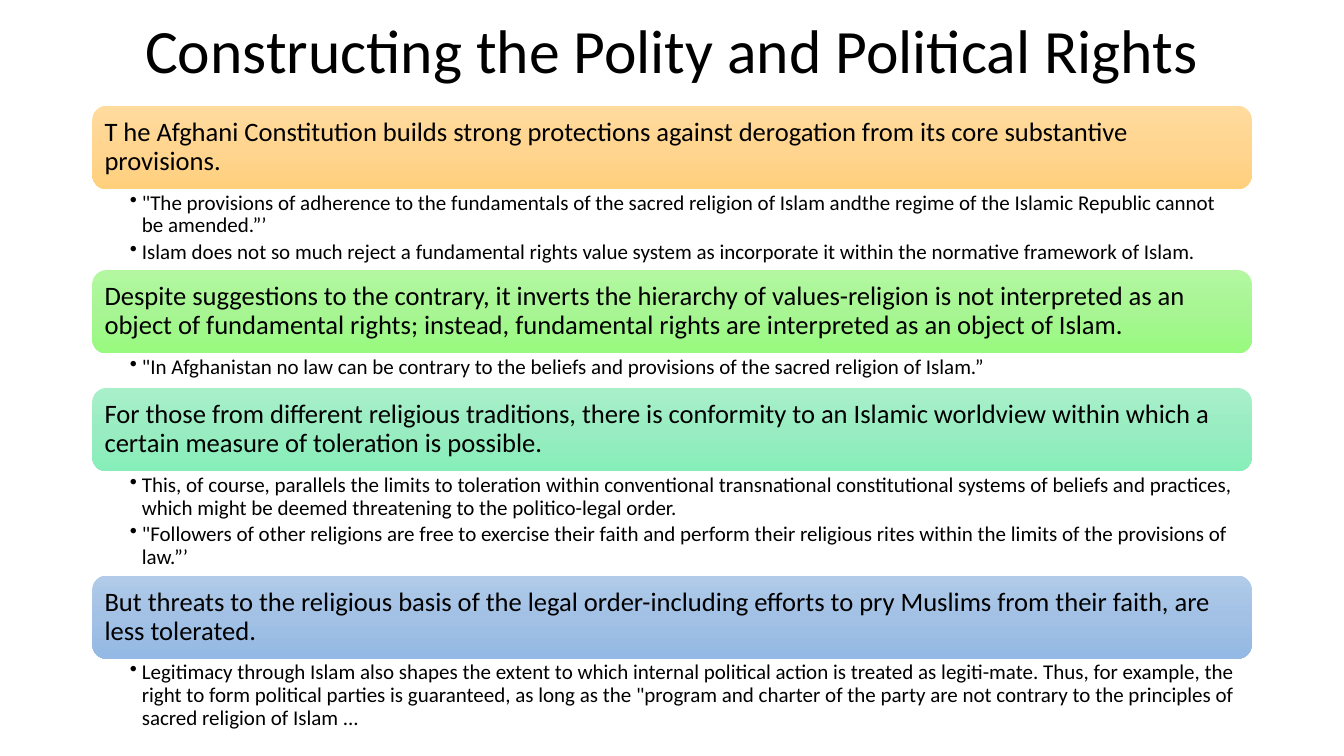
from copy import deepcopy

from lxml import etree
from pptx import Presentation
from pptx.dml.color import RGBColor
from pptx.enum.shapes import MSO_SHAPE
from pptx.enum.text import MSO_ANCHOR, MSO_AUTO_SIZE, PP_ALIGN
from pptx.oxml.ns import qn
from pptx.util import Inches, Pt

ROUNDED = MSO_SHAPE.ROUNDED_RECTANGLE
MIDDLE, TOP = MSO_ANCHOR.MIDDLE, MSO_ANCHOR.TOP
LEFT, CENTER = PP_ALIGN.LEFT, PP_ALIGN.CENTER
NO_FIT = MSO_AUTO_SIZE.NONE
TITLE_ONLY = 5

BLACK = RGBColor(0x00, 0x00, 0x00)
ORANGE = [RGBColor(0xFF, 0xDB, 0x9E), RGBColor(0xFF, 0xD5, 0x90), RGBColor(0xFF, 0xD0, 0x7C)]
GREEN = [RGBColor(0xB3, 0xF8, 0xA1), RGBColor(0xA7, 0xF6, 0x93), RGBColor(0x98, 0xFA, 0x7E)]
MINT = [RGBColor(0xA8, 0xF0, 0xCA), RGBColor(0x99, 0xEC, 0xC1), RGBColor(0x86, 0xEE, 0xB9)]
BLUE = [RGBColor(0xB1, 0xCB, 0xE9), RGBColor(0xA3, 0xC1, 0xE5), RGBColor(0x93, 0xB9, 0xE4)]

FONT = "Calibri"
SLIDE_WIDTH, SLIDE_HEIGHT = Inches(13.33), Inches(7.5)

# Percent of the slide's width or height
MARGIN, CONTENT_WIDTH = 6.88, 86.25
TITLE_TOP, TITLE_HEIGHT = 1.47, 11.2
FIRST_BAR_TOP, BAR_HEIGHT = 14, 11

# Gradient, heading, height of the list in percent, list items
SECTIONS = [
    (ORANGE,
     "T he Afghani Constitution builds strong protections against derogation from its core "
     "substantive provisions.",
     10.73,
     ["\"The provisions of adherence to the fundamentals of the sacred religion of Islam "
      "andthe regime of the Islamic Republic cannot be amended.”’",
      "Islam does not so much reject a fundamental rights value system as incorporate it "
      "within the normative framework of Islam."]),
    (GREEN,
     "Despite suggestions to the contrary, it inverts the hierarchy of values-religion is not "
     "interpreted as an object of fundamental rights; instead, fundamental rights are "
     "interpreted as an object of Islam.",
     4.6,
     ["\"In Afghanistan no law can be contrary to the beliefs and provisions of the sacred "
      "religion of Islam.”"]),
    (MINT,
     "For those from different religious traditions, there is conformity to an Islamic "
     "worldview within which a certain measure of toleration is possible.",
     13.8,
     ["This, of course, parallels the limits to toleration within conventional transnational "
      "constitutional systems of beliefs and practices, which might be deemed threatening to "
      "the politico-legal order.",
      "\"Followers of other religions are free to exercise their faith and perform their "
      "religious rites within the limits of the provisions of law.”’"]),
    (BLUE,
     "But threats to the religious basis of the legal order-including efforts to pry Muslims "
     "from their faith, are less tolerated.",
     10,
     ["Legitimacy through Islam also shapes the extent to which internal political action is "
      "treated as legiti-mate. Thus, for example, the right to form political parties is "
      "guaranteed, as long as the \"program and charter of the party are not contrary to the "
      "principles of sacred religion of Islam ..."]),
]


def content_area(top, height):
    """Left, top, width and height of a full-width band."""
    return (round(SLIDE_WIDTH * MARGIN / 100), round(SLIDE_HEIGHT * top / 100),
            round(SLIDE_WIDTH * CONTENT_WIDTH / 100), round(SLIDE_HEIGHT * height / 100))


def format_frame(frame, anchor, left, right, vertical):
    frame.word_wrap = True
    frame.auto_size = NO_FIT
    frame.vertical_anchor = anchor
    frame.margin_left, frame.margin_right = Inches(left), Inches(right)
    frame.margin_top = frame.margin_bottom = Inches(vertical)


def format_para(para, size, align=LEFT):
    para.alignment = align
    para.line_spacing = 0.9
    para.font.name = FONT
    para.font.size = Pt(size)
    para.font.color.rgb = BLACK


def add_bullet(para):
    properties = para._p.get_or_add_pPr()
    properties.set("marL", str(Inches(0.12)))
    properties.set("indent", str(-Inches(0.12)))
    etree.SubElement(properties, qn("a:buChar")).set("char", "•")


def fill_gradient(shape, colors):
    """Fill from top to bottom with three evenly spaced colours."""
    shape.fill.gradient()
    shape.fill.gradient_angle = 270
    stop_list = shape._element.spPr.find(".//" + qn("a:gsLst"))
    stop_list.insert(1, deepcopy(stop_list[0]))
    for index, (stop, color) in enumerate(zip(shape.fill.gradient_stops, colors)):
        stop.position = index / 2
        stop.color.rgb = color


def add_title(page, text):
    title = page.shapes.title
    title.left, title.top, title.width, title.height = content_area(TITLE_TOP, TITLE_HEIGHT)
    title.text_frame.text = text
    format_frame(title.text_frame, MIDDLE, 0.1, 0.1, 0.05)
    format_para(title.text_frame.paragraphs[0], 44, CENTER)


def add_heading_bar(page, top, text, colors):
    bar = page.shapes.add_shape(ROUNDED, *content_area(top, BAR_HEIGHT))
    bar.shadow.inherit = False
    bar.line.fill.background()
    fill_gradient(bar, colors)
    bar.text_frame.text = text
    format_frame(bar.text_frame, MIDDLE, 0.08, 0.08, 0.08)
    format_para(bar.text_frame.paragraphs[0], 19)


def add_bullet_list(page, top, height, items):
    box = page.shapes.add_textbox(*content_area(top, height))
    frame = box.text_frame
    format_frame(frame, TOP, 0.37, 0.15, 0.03)
    frame.text = "\n".join(items)
    for para in frame.paragraphs:
        para.level = 1
        add_bullet(para)
        format_para(para, 15)
        para.space_after = Pt(3)


def main():
    deck = Presentation()
    deck.slide_width, deck.slide_height = SLIDE_WIDTH, SLIDE_HEIGHT
    page = deck.slides.add_slide(deck.slide_layouts[TITLE_ONLY])
    add_title(page, "Constructing the Polity and Political Rights")

    # Heading bars, each followed by its list
    top = FIRST_BAR_TOP
    for colors, heading, list_height, items in SECTIONS:
        add_heading_bar(page, top, heading, colors)
        add_bullet_list(page, top + BAR_HEIGHT, list_height, items)
        top += BAR_HEIGHT + list_height

    deck.save("out.pptx")


if __name__ == "__main__":
    main()
